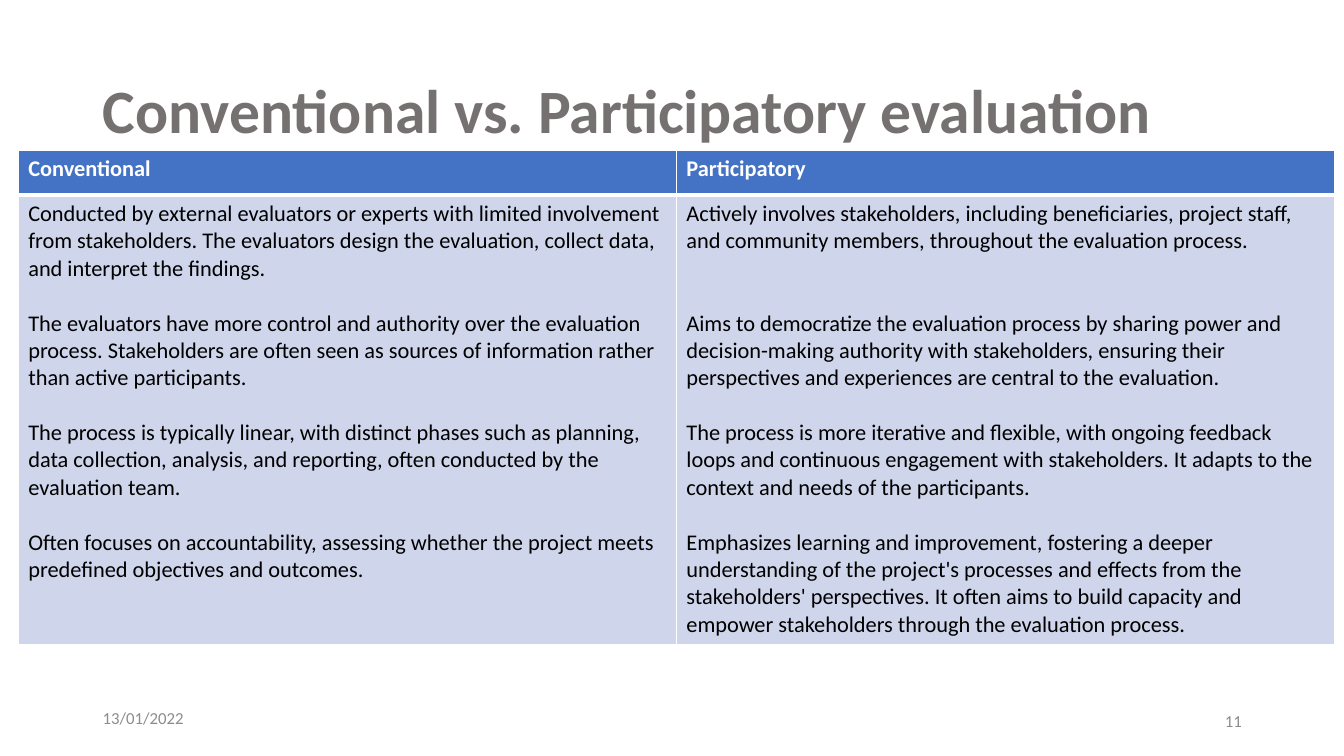
from lxml import etree
from pptx import Presentation
from pptx import util as u
from pptx.dml.color import RGBColor
from pptx.enum import text as t
from pptx.oxml import ns

COLORS = {"title": "767171", "header": "4472C4", "body": "CFD5EA",
          "white": "FFFFFF", "black": "000000", "footer": "8C8C8C"}
BLANK_LINE = 19.53
COMPARISON = {
    "Conventional": [
        (0, "Conducted by external evaluators or experts with limited involvement from stakeholders. "
            "The evaluators design the evaluation, collect data, and interpret the findings."),
        (1, "The evaluators have more control and authority over the evaluation process. "
            "Stakeholders are often seen as sources of information rather than active participants."),
        (1, "The process is typically linear, with distinct phases such as planning, data collection, "
            "analysis, and reporting, often conducted by the evaluation team."),
        (1, "Often focuses on accountability, assessing whether the project meets predefined "
            "objectives and outcomes."),
    ],
    "Participatory": [
        (0, "Actively involves stakeholders, including beneficiaries, project staff, and community "
            "members, throughout the evaluation process."),
        (2, "Aims to democratize the evaluation process by sharing power and decision-making authority "
            "with stakeholders, ensuring their perspectives and experiences are central to the evaluation."),
        (1, "The process is more iterative and flexible, with ongoing feedback loops and continuous "
            "engagement with stakeholders. It adapts to the context and needs of the participants."),
        (1, "Emphasizes learning and improvement, fostering a deeper understanding of the project's "
            "processes and effects from the stakeholders' perspectives. It often aims to build capacity "
            "and empower stakeholders through the evaluation process."),
    ],
}


def style(paragraph, size, color, bold=False):
    """Set the font of a whole paragraph."""
    font = paragraph.font
    font.name, font.size, font.bold = "Calibri", u.Pt(size), bold
    font.color.rgb = RGBColor.from_string(COLORS[color])


def add_title(slide, left, top, width, height):
    """Place and format the title placeholder."""
    title = slide.shapes.title
    title.left, title.top, title.width, title.height = left, top, width, height
    frame = title.text_frame
    frame.text = "Conventional vs. Participatory evaluation"
    frame.word_wrap, frame.auto_size = True, t.MSO_AUTO_SIZE.NONE
    frame.vertical_anchor = t.MSO_ANCHOR.MIDDLE
    heading = frame.paragraphs[0]
    heading.alignment, heading.line_spacing = t.PP_ALIGN.LEFT, 0.9
    style(heading, 44, "title", True)


def finish_cell(cell, fill, bottom_width):
    """Draw white borders around a cell and fill it."""
    properties = cell._tc.get_or_add_tcPr()
    for side, points in (("L", 1), ("R", 1), ("T", 1), ("B", bottom_width)):
        line = etree.SubElement(properties, ns.qn(f"a:ln{side}"), w=str(u.Pt(points)))
        solid = etree.SubElement(line, ns.qn("a:solidFill"))
        etree.SubElement(solid, ns.qn("a:srgbClr"), val=COLORS["white"])
    cell.fill.solid()
    cell.fill.fore_color.rgb = RGBColor.from_string(COLORS[fill])


def add_comparison(slide, left, top, width, height):
    """Set the two approaches side by side in a table."""
    table = slide.shapes.add_table(2, len(COMPARISON), left, top, width, height).table
    table.rows[0].height = u.Cm(1.14)
    table.rows[1].height = height - u.Cm(1.14)
    for column, (approach, points) in enumerate(COMPARISON.items()):
        header, body = table.cell(0, column), table.cell(1, column)
        header.text = approach
        style(header.text_frame.paragraphs[0], 16, "white", True)
        finish_cell(header, "header", 3)
        body.text = "\n".join(point for _, point in points)
        for paragraph, (gap, _) in zip(body.text_frame.paragraphs, points):
            if gap:
                paragraph.space_before = u.Pt(gap * BLANK_LINE)
            style(paragraph, 16, "black")
        finish_cell(body, "body", 1)


def add_footer(slide, wording, alignment, left, top, width, height):
    """Add one footer entry."""
    frame = slide.shapes.add_textbox(left, top, width, height).text_frame
    frame.text, frame.word_wrap = wording, True
    frame.vertical_anchor = t.MSO_ANCHOR.MIDDLE
    frame.paragraphs[0].alignment = alignment
    style(frame.paragraphs[0], 12, "footer")


def main():
    """Build and save the slide."""
    deck = Presentation()
    deck.slide_width, deck.slide_height = u.Cm(33.87), u.Cm(19.05)
    slide = deck.slides.add_slide(deck.slide_layouts[5])
    add_footer(slide, "13/01/2022", t.PP_ALIGN.LEFT, u.Cm(2.34), u.Cm(17.58), u.Cm(7.62), u.Cm(1.02))
    add_footer(slide, "11", t.PP_ALIGN.RIGHT, u.Cm(23.93), u.Cm(17.65), u.Cm(7.62), u.Cm(1.02))
    add_title(slide, u.Cm(2.34), u.Cm(1.02), u.Cm(29.21), u.Cm(3.68))
    add_comparison(slide, u.Cm(0.46), u.Cm(3.78), u.Cm(33.17), u.Cm(12.47))
    deck.save("out.pptx")


if __name__ == "__main__":
    main()
